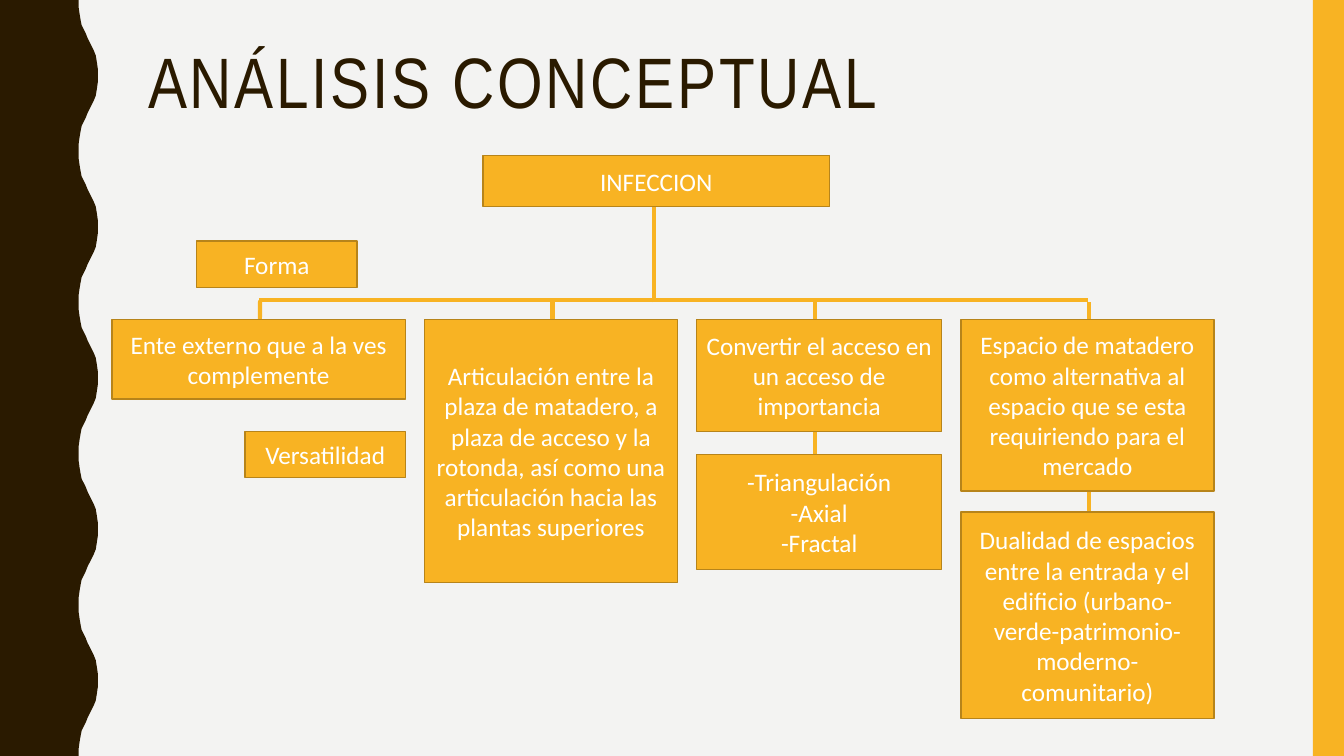
import dataclasses

import lxml.etree
import pptx
import pptx.dml.color
import pptx.enum.shapes
import pptx.enum.text
import pptx.oxml.ns
import pptx.shapes.autoshape
import pptx.slide
import pptx.text.text
import pptx.util

Inches = pptx.util.Inches
Pt = pptx.util.Pt

HUES: dict[str, str] = {
    "paper": "F3F3F2",
    "dark": "2A1A00",
    "gold": "F8B323",
    "edge": "B7841A",
    "white": "FFFFFF",
}
WIDTH, HEIGHT = 13.33, 7.5
RAIL = 2.98
TOP = 3.17
PERIOD = 1.5
CURVE: list[tuple[float, float]] = [
    (0.78, 0), (0.78, 0.07), (0.79, 0.14), (0.8, 0.2), (0.81, 0.25),
    (0.83, 0.29), (0.85, 0.33), (0.87, 0.38), (0.89, 0.42), (0.91, 0.46),
    (0.93, 0.5), (0.95, 0.55), (0.96, 0.61), (0.97, 0.68), (0.97, 0.75),
]


@dataclasses.dataclass
class Box:
    left: float
    top: float
    width: float
    height: float
    lines: list[str]


@dataclasses.dataclass
class Link:
    start: tuple[float, float]
    end: tuple[float, float]


BOXES: list[Box] = [
    Box(4.79, 1.54, 3.44, 0.51, ["INFECCION"]),
    Box(1.11, TOP, 2.91, 0.79, ["Ente externo que a la ves complemente"]),
    Box(1.95, 2.39, 1.59, 0.46, ["Forma"]),
    Box(2.43, 4.28, 1.59, 0.46, ["Versatilidad"]),
    Box(4.21, TOP, 2.51, 2.61, [
        "Articulación entre la plaza de matadero, a plaza de acceso y la "
        "rotonda, así como una articulación hacia las plantas superiores"]),
    Box(6.91, TOP, 2.43, 1.11, ["Convertir el acceso en un acceso de importancia"]),
    Box(6.91, 4.51, 2.43, 1.14, ["-Triangulación", "-Axial", "-Fractal"]),
    Box(9.53, TOP, 2.51, 1.7, [
        "Espacio de matadero como alternativa al espacio que se esta "
        "requiriendo para el mercado"]),
    Box(9.53, 5.08, 2.51, 2.05, [
        "Dualidad de espacios entre la entrada y el edificio "
        "(urbano-verde-patrimonio-moderno- comunitario)"]),
]

LINKS: list[Link] = [
    Link((6.49, 3), (6.49, 1.9)),
    Link((2.57, RAIL), (10.79, RAIL)),
    Link((10.8, 3), (10.8, 5.62)),
    Link((8.08, RAIL), (8.08, 4.87)),
    Link((5.48, RAIL), (5.48, 4.87)),
    Link((2.58, RAIL), (2.57, 3.74)),
]


def color(name: str) -> pptx.dml.color.RGBColor:
    return pptx.dml.color.RGBColor.from_string(HUES[name])


def paint(shape: pptx.shapes.autoshape.Shape, fill: str, edge: str | None = None) -> None:
    shape.shadow.inherit = False
    shape.fill.solid()
    shape.fill.fore_color.rgb = color(fill)
    if edge:
        shape.line.color.rgb = color(edge)
        shape.line.width = Pt(1)
    else:
        shape.line.fill.background()


def style(para: pptx.text.text._Paragraph, face: str, size: float, hue: str) -> None:
    para.font.name = face
    para.font.size = Pt(size)
    para.font.color.rgb = color(hue)


def draw_rect(slide: pptx.slide.Slide, left: float, top: float, width: float,
              height: float) -> pptx.shapes.autoshape.Shape:
    return slide.shapes.add_shape(
        pptx.enum.shapes.MSO_SHAPE.RECTANGLE,
        Inches(left), Inches(top), Inches(width), Inches(height))


def draw_wave(slide: pptx.slide.Slide) -> None:
    cycle = CURVE + [(x, PERIOD - y) for x, y in CURVE[-2::-1]]
    points = [(0.78, 0.0)]
    for turn in range(round(HEIGHT / PERIOD)):
        points += [(x, y + turn * PERIOD) for x, y in cycle[1:]]
    points.append((0, HEIGHT))
    pen = slide.shapes.build_freeform(0, 0)
    pen.add_line_segments([(Inches(x), Inches(y)) for x, y in points], close=True)
    paint(pen.convert_to_shape(), "dark")


def draw_link(slide: pptx.slide.Slide, link: Link) -> None:
    (left, top), (right, base) = link.start, link.end
    line = slide.shapes.add_connector(
        pptx.enum.shapes.MSO_CONNECTOR.STRAIGHT,
        Inches(left), Inches(top), Inches(right), Inches(base))
    line.line.color.rgb = color("gold")
    line.line.width = Pt(3)
    lxml.etree.SubElement(line._element.spPr, pptx.oxml.ns.qn("a:effectLst"))


def draw_title(slide: pptx.slide.Slide) -> None:
    frame = slide.shapes.add_textbox(
        Inches(1.37), Inches(0.42), Inches(11.13), Inches(1.63)).text_frame
    frame.word_wrap = True
    para = frame.paragraphs[0]
    para.line_spacing = 0.9
    style(para, "Arial Narrow", 51, "dark")
    run = para.add_run()
    run.text = "ANÁLISIS CONCEPTUAL"
    run._r.get_or_add_rPr().set("spc", "200")


def draw_box(slide: pptx.slide.Slide, box: Box) -> None:
    shape = draw_rect(slide, box.left, box.top, box.width, box.height)
    paint(shape, "gold", "edge")
    frame = shape.text_frame
    frame.word_wrap = True
    frame.vertical_anchor = pptx.enum.text.MSO_ANCHOR.MIDDLE
    frame.text = "\n".join(box.lines)
    for para in frame.paragraphs:
        para.alignment = pptx.enum.text.PP_ALIGN.CENTER
        style(para, "Calibri", 18, "white")


def main() -> None:
    deck = pptx.Presentation()
    deck.slide_width, deck.slide_height = Inches(WIDTH), Inches(HEIGHT)
    slide = deck.slides.add_slide(deck.slide_layouts[6])
    slide.background.fill.solid()
    slide.background.fill.fore_color.rgb = color("paper")
    draw_wave(slide)
    paint(draw_rect(slide, 13.02, 0, 0.31, HEIGHT), "gold")
    for link in LINKS:
        draw_link(slide, link)
    draw_title(slide)
    for box in BOXES:
        draw_box(slide, box)
    deck.save("out.pptx")


if __name__ == "__main__":
    main()
